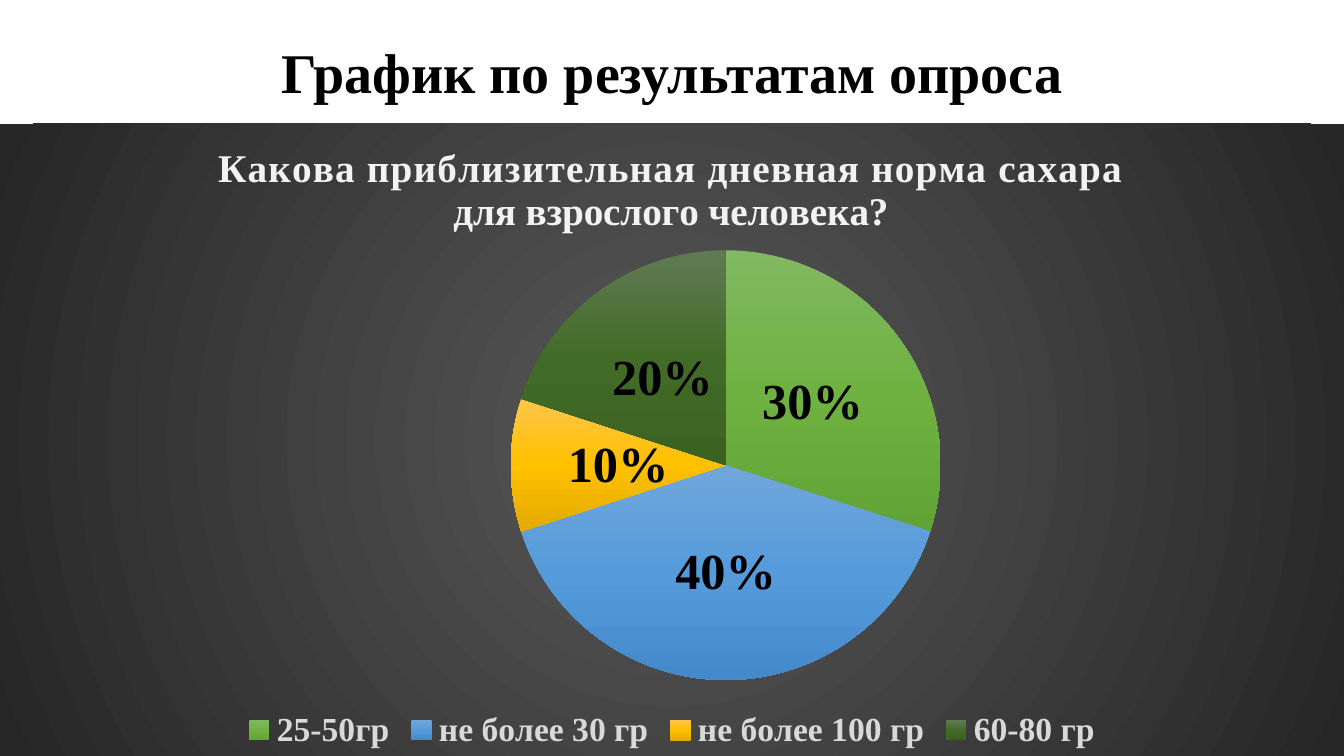
from lxml import etree
from pptx import Presentation
from pptx.chart.data import CategoryChartData
from pptx.dml.color import RGBColor
from pptx.enum.chart import XL_CHART_TYPE, XL_LABEL_POSITION, XL_LEGEND_POSITION
from pptx.enum.text import MSO_ANCHOR, PP_ALIGN
from pptx.oxml import parse_xml
from pptx.oxml.ns import nsdecls, qn
from pptx.util import Pt

PIE = XL_CHART_TYPE.PIE
BOTTOM = XL_LEGEND_POSITION.BOTTOM
MIDDLE = XL_LABEL_POSITION.CENTER
SERIF = "Times New Roman"
INK = {"black": "000000", "title": "F2F2F2", "legend": "D9D9D9"}
BACK = {0: "595959", 100: "262626"}
ANSWERS = {
    "25-50гр": (30, {0: "81B861", 50: "6FB242", 100: "62A336"}),
    "не более 30 гр": (40, {0: "71A6DB", 50: "559BDB", 100: "448ACA"}),
    "не более 100 гр": (10, {0: "FFC64B", 50: "FFC000", 100: "E3AB00"}),
    "60-80 гр": (20, {0: "607B53", 50: "436B28", 100: "3B6220"}),
}
QUESTION = ["Какова приблизительная дневная норма сахара", "для взрослого человека?"]


def style(font, size, ink):
    font.name, font.size, font.bold = SERIF, Pt(size), True
    font.color.rgb = RGBColor.from_string(INK[ink])


def shade(stops, form):
    """Return a gradient fill made of percent stops and a direction element."""
    fill = etree.fromstring(f"<a:gradFill {nsdecls('a')}><a:gsLst/>{form}</a:gradFill>")
    for spot, tone in stops.items():
        stop = etree.SubElement(fill[0], qn("a:gs"), pos=str(spot * 1000))
        etree.SubElement(stop, qn("a:srgbClr"), val=tone)
    return fill


prs = Presentation()
prs.slide_width, prs.slide_height = Pt(960), Pt(540)
slide = prs.slides.add_slide(prs.slide_layouts[6])

# Pie chart
data = CategoryChartData()
data.categories = list(ANSWERS)
data.add_series("Series 1", [share for share, _ in ANSWERS.values()])
frame = slide.shapes.add_chart(PIE, 0, Pt(88.5), Pt(960), Pt(451.5), data)
chart = frame.chart
chart.font.name, chart.font.size = "Calibri", Pt(10)
plot = chart.plots[0]
plot.vary_by_categories = True

for index, (_, stops) in enumerate(ANSWERS.values()):
    form = plot.series[0].points[index].format
    form.line.fill.background()
    form.fill.solid()
    solid = chart._chartSpace.xpath("//c:dPt/c:spPr/a:solidFill")[0]
    solid.getparent().replace(solid, shade(stops, '<a:lin ang="5400000" scaled="0"/>'))

ground = parse_xml(f"<c:spPr {nsdecls('c', 'a')}><a:ln><a:noFill/></a:ln></c:spPr>")
ground.insert(0, shade(BACK, '<a:path path="circle"><a:fillToRect l="50000" t="50000"'
                             ' r="50000" b="50000"/></a:path>'))
chart._chartSpace.find(qn("c:chart")).addnext(ground)

# Labels and legend
plot.has_data_labels = True
labels = plot.data_labels
labels.show_percentage, labels.show_value = True, False
labels.number_format, labels.number_format_is_linked = "0%", False
labels.position = MIDDLE
style(labels.font, 36, "black")

chart.has_legend = True
chart.legend.position = BOTTOM
chart.legend.include_in_layout = False
style(chart.legend.font, 24, "legend")

# Chart title
chart.has_title = True
words = chart.chart_title.text_frame
words.text = "\n".join(QUESTION)
for para in words.paragraphs:
    para.alignment = PP_ALIGN.CENTER
    style(para.runs[0].font, 28, "title")
words.paragraphs[0].runs[0]._r.get_or_add_rPr().set("spc", "100")

# Places of title and pie, as shares of the chart
spots = [
    ("c:title", 1, {"x": 0.16, "y": 0.03}),
    ("c:plotArea", 0, {"x": 0.38, "y": 0.2, "w": 0.32, "h": 0.68}),
]
for tag, order, box in spots:
    part = chart._chartSpace.find(f".//{qn(tag)}")
    for old in part.findall(qn("c:layout")):
        part.remove(old)
    target = '<c:layoutTarget val="inner"/>' if "w" in box else ""
    modes = '<c:xMode val="edge"/><c:yMode val="edge"/>'
    sides = "".join(f'<c:{side} val="{size}"/>' for side, size in box.items())
    part.insert(order, parse_xml(
        f"<c:layout {nsdecls('c')}><c:manualLayout>{target}{modes}{sides}"
        "</c:manualLayout></c:layout>"))

# Slide title
head = slide.shapes.add_textbox(Pt(66), Pt(1.5), Pt(828), Pt(104.5)).text_frame
head.word_wrap = True
head.vertical_anchor = MSO_ANCHOR.MIDDLE
head.text = "График по результатам опроса"
line = head.paragraphs[0]
line.alignment, line.line_spacing = PP_ALIGN.CENTER, 0.9
style(line.runs[0].font, 40, "black")

prs.save("out.pptx")
